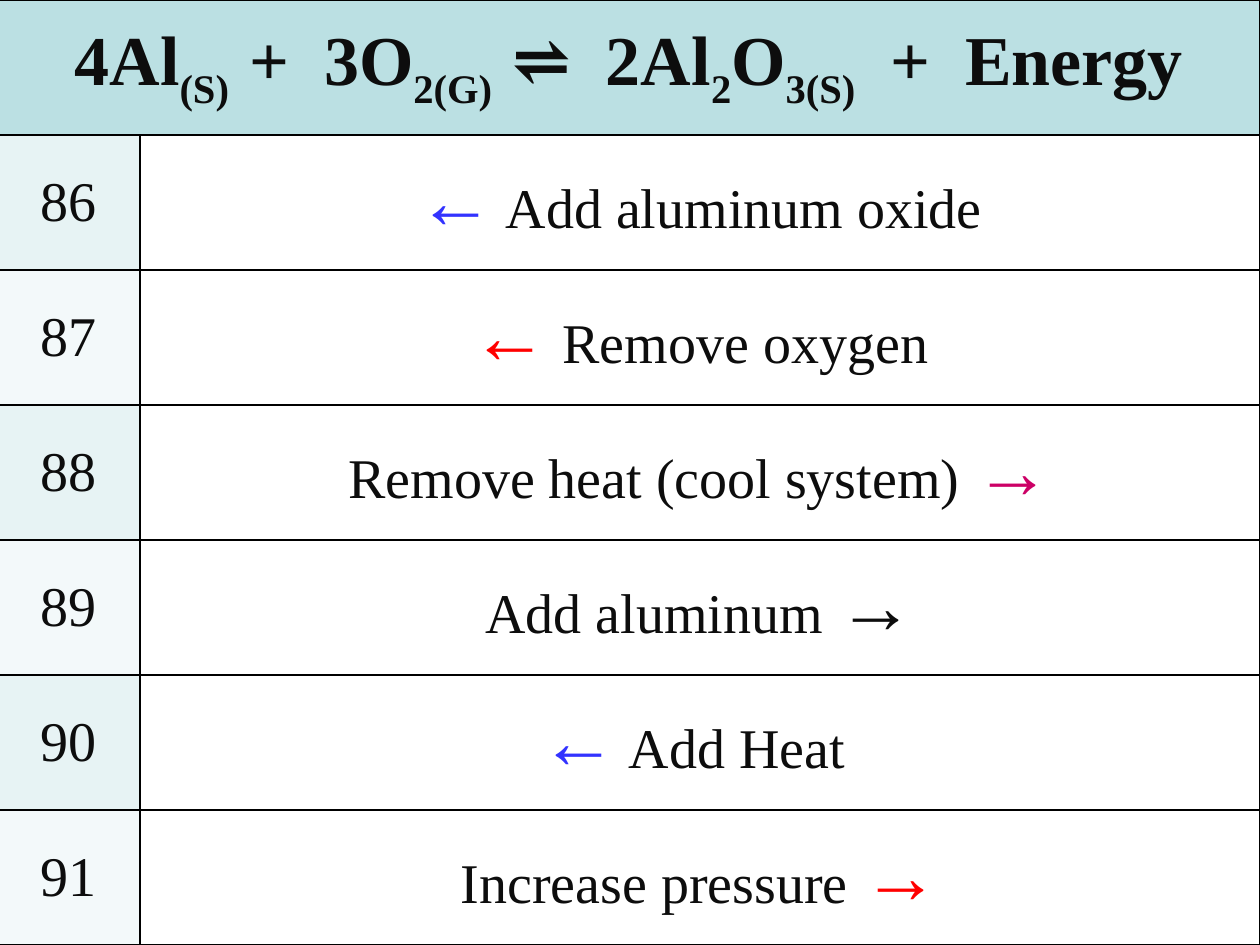
"""Build the equilibrium shift slide for the oxidation of aluminum."""
import lxml.etree
import pptx
import pptx.dml.color
import pptx.enum.text
import pptx.oxml.ns
import pptx.util

Inches = pptx.util.Inches
RGBColor = pptx.dml.color.RGBColor
qn = pptx.oxml.ns.qn

INK = RGBColor(0x0D, 0x0D, 0x0D)
BLUE = RGBColor(0x33, 0x33, 0xFF)
RED = RGBColor(0xFF, 0x00, 0x00)
MAGENTA = RGBColor(0xCC, 0x00, 0x66)
HEADER_FILL = RGBColor(0xBB, 0xE0, 0xE3)
NUMBER_FILLS = [RGBColor(0xE7, 0xF3, 0xF4), RGBColor(0xF3, 0xF9, 0xFA)]
BORDER = RGBColor(0x00, 0x00, 0x00)

EQUATION = ["4Al", "(S)  ", "+  3O", "2(G)  ", "⇌  2Al", "2", "O", "3(S)", "  +  Energy"]
STRESSES = [
    [("←", BLUE), (" Add aluminum oxide", INK)],
    [("←", RED), (" Remove oxygen", INK)],
    [("Remove heat (cool system) ", INK), ("→", MAGENTA)],
    [("Add aluminum ", INK), ("→", INK)],
    [("←", BLUE), (" Add Heat ", INK)],
    [("Increase pressure ", INK), ("→", RED)],
]
FIRST_NUMBER = 86
COLUMN_WIDTHS = [1.13, 8.89]
ROW_COUNT = len(STRESSES) + 1


def add_run(cell, text, size, color=INK, bold=False):
    run = cell.text_frame.paragraphs[0].add_run()
    run.text = text
    run.font.color.rgb = color
    font_format = {"name": "Times New Roman", "size": pptx.util.Pt(size), "bold": bold}
    for name, value in font_format.items():
        setattr(run.font, name, value)
    return run


def format_cell(cell, fill_color=None):
    cell.vertical_anchor = pptx.enum.text.MSO_ANCHOR.MIDDLE
    cell.text_frame.paragraphs[0].alignment = pptx.enum.text.PP_ALIGN.CENTER
    properties = cell._tc.get_or_add_tcPr()
    for side in ("a:lnL", "a:lnR", "a:lnT", "a:lnB"):
        line = lxml.etree.SubElement(properties, qn(side), w=str(pptx.util.Pt(1)))
        solid = lxml.etree.SubElement(line, qn("a:solidFill"))
        lxml.etree.SubElement(solid, qn("a:srgbClr"), val=str(BORDER))
    if fill_color is None:
        cell.fill.background()
    else:
        cell.fill.solid()
        cell.fill.fore_color.rgb = fill_color


presentation = pptx.Presentation()
presentation.slide_width = Inches(10)
presentation.slide_height = Inches(7.5)
slide = presentation.slides.add_slide(presentation.slide_layouts[6])

shape = slide.shapes.add_table(
    ROW_COUNT, 2, Inches(-0.02), Inches(0), Inches(sum(COLUMN_WIDTHS)), Inches(7.5)
)
table = shape.table
for name, value in {"first_row": False, "horz_banding": False}.items():
    setattr(table, name, value)
for column, width in zip(table.columns, COLUMN_WIDTHS):
    column.width = Inches(width)
for row in table.rows:
    row.height = Inches(7.5 / ROW_COUNT)

header = table.cell(0, 0)
header.merge(table.cell(0, 1))
format_cell(header, HEADER_FILL)
format_cell(table.cell(0, 1), HEADER_FILL)
for index, text in enumerate(EQUATION):
    run = add_run(header, text, 40, bold=True)
    if index % 2:
        run.font._element.set("baseline", "-25000")

for index, parts in enumerate(STRESSES):
    number_cell, stress_cell = table.rows[index + 1].cells
    format_cell(number_cell, NUMBER_FILLS[index % 2])
    add_run(number_cell, str(FIRST_NUMBER + index), 32)
    format_cell(stress_cell)
    for text, color in parts:
        add_run(stress_cell, text, 44 if text in "←→" else 32, color)

presentation.save("out.pptx")
